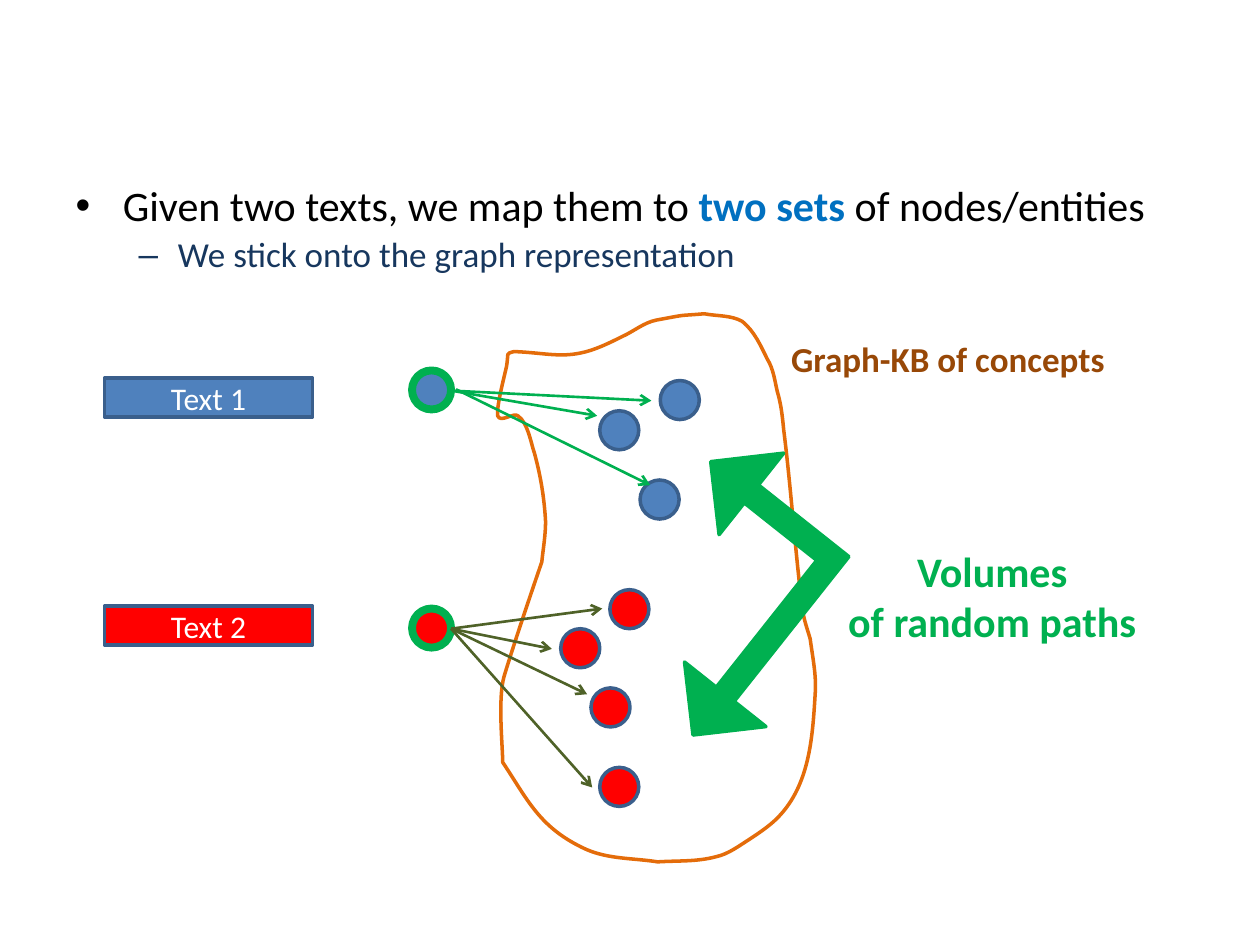
import pptx
import pptx.util
import pptx.dml.color
import pptx.oxml.ns
import pptx.enum.shapes
import pptx.enum.text
from lxml import etree

SCALE = 9144  # EMU per px, 100 px to the inch
FONT = "Calibri"
BLUE, RED, GREEN = "4F81BD", "FF0000", "00B050"
EDGE, OLIVE, ORANGE = "3A5F8C", "4F6228", "E46C0A"
DOT = 31
KIND = pptx.enum.shapes.MSO_SHAPE
ALIGN = pptx.enum.text.PP_ALIGN
ANCHOR = pptx.enum.text.MSO_ANCHOR
qn = pptx.oxml.ns.qn

# Outline of the graph: start, then two controls and an end per curve
START = (395, 330)
CURVES = [
    (394, 323, 399, 304, 402, 291), (404, 279, 401, 281, 408, 279),
    (434, 280, 447, 285, 469, 278), (478, 275, 486, 271, 494, 267),
    (503, 263, 511, 256, 521, 254), (548, 249, 536, 251, 559, 249),
    (569, 251, 580, 250, 589, 255), (599, 263, 604, 275, 609, 285),
    (614, 293, 615, 303, 617, 311), (620, 321, 621, 331, 622, 341),
    (628, 389, 631, 437, 637, 484), (638, 492, 641, 500, 643, 507),
    (645, 522, 648, 536, 647, 550), (645, 583, 643, 620, 620, 646),
    (613, 654, 604, 660, 595, 666), (587, 671, 578, 678, 568, 680),
    (553, 684, 538, 683, 522, 684), (503, 681, 483, 682, 465, 674),
    (428, 657, 419, 635, 399, 605), (399, 593, 395, 555, 400, 537),
    (409, 507, 430, 446, 430, 446), (431, 436, 433, 425, 433, 414),
    (432, 395, 429, 377, 424, 359), (422, 354, 419, 335, 411, 330),
    (408, 327, 397, 336, 395, 330),
]


def px(*vals):
    return [pptx.util.Emu(round(v * SCALE)) for v in vals]


def hue(code):
    return pptx.dml.color.RGBColor.from_string(code)


def add_run(para, text, size, color, bold=False):
    run = para.add_run()
    run.text = text
    run.font.name = FONT
    run.font.size = pptx.util.Pt(size)
    run.font.bold = bold
    run.font.color.rgb = hue(color)


def stroke(line, color, width):
    line.color.rgb = hue(color)
    line.width = pptx.util.Pt(width)


def add_form(shapes, kind, at, fill, edge=EDGE, width=2):
    form = shapes.add_shape(kind, *px(*at))
    form.shadow.inherit = False
    form.fill.solid()
    form.fill.fore_color.rgb = hue(fill)
    stroke(form.line, edge, width)
    return form


def add_tag(shapes, text, top, fill):
    tag = add_form(shapes, KIND.RECTANGLE, (83, top, 165, 31), fill)
    tag.text_frame.vertical_anchor = ANCHOR.MIDDLE
    para = tag.text_frame.paragraphs[0]
    para.alignment = ALIGN.CENTER
    add_run(para, text, 18, "FFFFFF")


def add_dots(shapes, spots, fill):
    group = shapes.add_group_shape().shapes
    for x, y in spots:
        add_form(group, KIND.OVAL, (x, y, DOT, DOT), fill)


def add_arrow(shapes, start, end, color):
    line = shapes.add_connector(
        pptx.enum.shapes.MSO_CONNECTOR.STRAIGHT, *px(*start, *end))
    stroke(line.line, color, 1.5)
    tip = etree.SubElement(line.line._get_or_add_ln(), qn("a:tailEnd"))
    tip.set("type", "arrow")
    etree.SubElement(line._element.spPr, qn("a:effectLst"))


def add_fan(shapes, spot, fill, color, rays):
    group = shapes.add_group_shape().shapes
    add_form(group, KIND.OVAL, (*spot, DOT, DOT), fill, GREEN, 4.5)
    for start, end in rays:
        add_arrow(group, start, end, color)


def bend(shape, curves):
    """Turn each straight segment of a freeform into a cubic curve."""
    segments = list(shape._element.iter(qn("a:lnTo")))
    for segment, curve in zip(segments, curves):
        cubic = etree.Element(qn("a:cubicBezTo"))
        spots = px(*curve)
        for x, y in zip(spots[::2], spots[1::2]):
            etree.SubElement(cubic, qn("a:pt"), x=str(x - shape.left),
                             y=str(y - shape.top))
        segment.getparent().replace(segment, cubic)


def add_cloud(shapes):
    pen = shapes.build_freeform(*px(*START))
    pen.add_line_segments([px(*curve[4:]) for curve in CURVES])
    cloud = pen.convert_to_shape()
    bend(cloud, CURVES)
    cloud.shadow.inherit = False
    cloud.fill.background()
    stroke(cloud.line, ORANGE, 2)


def add_label(shapes, at, lines, size, color, align):
    frame = shapes.add_textbox(*px(*at)).text_frame
    frame.word_wrap = False
    frame.auto_size = pptx.enum.text.MSO_AUTO_SIZE.SHAPE_TO_FIT_TEXT
    for i, text in enumerate(lines):
        para = frame.add_paragraph() if i else frame.paragraphs[0]
        para.alignment = align
        add_run(para, text, size, color, True)


def fill_body(body):
    body.left, body.top, body.width, body.height = px(50, 142, 900, 115)
    frame = body.text_frame
    first, second = frame.paragraphs[0], frame.add_paragraph()
    second.level = 1
    for para in (first, second):
        para.line_spacing = 0.9
    add_run(first, "Given two texts, we map them to ", 24, "000000")
    add_run(first, "two sets", 24, "0070C0", True)
    add_run(first, " of nodes/entities", 24, "000000")
    add_run(second, "We stick onto the graph representation", 20, "17375E")


def main():
    deck = pptx.Presentation()
    deck.slide_width, deck.slide_height = px(1000, 750)
    slide = deck.slides.add_slide(deck.slide_layouts[1])
    shapes = slide.shapes

    # Bullets, with no title on this slide
    title = shapes.title._element
    title.getparent().remove(title)
    fill_body(slide.placeholders[1])

    # The two texts and their nodes
    add_tag(shapes, "Text 1", 300, BLUE)
    add_tag(shapes, "Text 2", 481, RED)
    add_dots(shapes, [(476, 326), (524, 302), (508, 381)], BLUE)
    add_dots(shapes, [(445, 499), (484, 468), (469, 546), (476, 609)], RED)
    add_cloud(shapes)

    # Mapping from each text to its nodes
    add_fan(shapes, (327, 294), BLUE, GREEN,
            [((358, 310), (474, 330)), ((362, 309), (516, 385)),
             ((358, 310), (517, 318))])
    ends = [(478, 483), (438, 515), (466, 551), (470, 625)]
    add_fan(shapes, (327, 483), RED, OLIVE,
            [((358, 499), end) for end in ends])

    # Random paths between the two sets
    paths = shapes.add_group_shape().shapes
    arrow = add_form(paths, KIND.LEFT_UP_ARROW, (476, 389, 220, 165),
                     GREEN, GREEN)
    arrow.rotation = 308.4
    for i, value in enumerate((0.11, 0.25, 0.25)):
        arrow.adjustments[i] = value
    add_label(paths, (662, 428, 251, 91), ["Volumes", "of random paths"],
              24, GREEN, ALIGN.CENTER)
    add_label(shapes, (618, 263, 271, 44), ["Graph-KB of concepts"],
              20, "984807", ALIGN.LEFT)

    deck.save("out.pptx")


if __name__ == "__main__":
    main()
